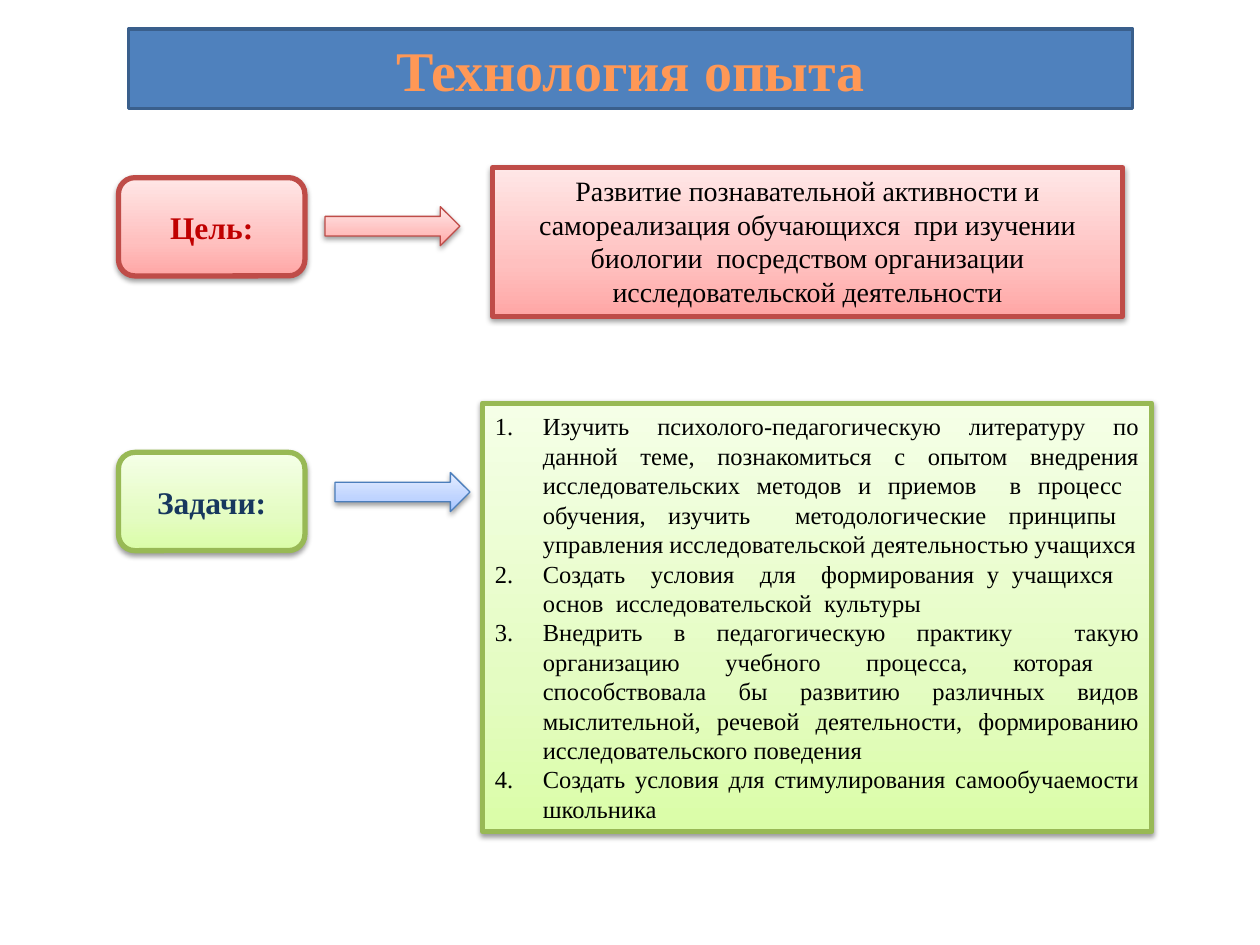
from lxml import etree
from pptx import Presentation
from pptx.dml.color import RGBColor
from pptx.enum import shapes, text
from pptx.oxml import ns
from pptx.util import Inches, Pt

FONT = "Times New Roman"
# Gradient stops from bottom to top, then the outline colour
RED = ("FFA6A5", "FFC0BF", "FFE7E7"), "BF4C48"
GREEN = ("DAFDA7", "E4FCC2", "F5FFE7"), "98B955"
BLUE = ("A4C4FF", "BFD4FF", "E6EEFF"), "4B7EBC"
STOPS = (0, 35, 100)

GOAL = ("Развитие познавательной активности и самореализация обучающихся  при изучении "
        "биологии  посредством организации исследовательской деятельности")
TASKS = [
    "Изучить психолого-педагогическую литературу по данной теме, познакомиться с опытом "
    "внедрения исследовательских методов и приемов  в процесс  обучения, изучить  "
    "методологические принципы  управления исследовательской деятельностью учащихся",
    "Создать  условия  для  формирования у учащихся   основ  исследовательской  культуры",
    "Внедрить в педагогическую практику  такую организацию учебного процесса, которая  "
    "способствовала бы развитию различных видов мыслительной, речевой деятельности, "
    "формированию исследовательского поведения",
    "Создать условия для стимулирования самообучаемости школьника",
]


def rgb(value):
    return RGBColor.from_string(value)


def add(parent, tag, **attributes):
    return etree.SubElement(parent, ns.qn(tag), attributes)


def set_outline(shape, color, width):
    shape.line.color.rgb = rgb(color)
    shape.line.width = Pt(width)


def add_panel(slide, kind, box, palette, width=3):
    """Shape with a vertical gradient, an outline and a soft shadow."""
    colors, outline = palette
    shape = slide.shapes.add_shape(kind, *map(Inches, box))
    shape.fill.gradient()
    shape.fill.gradient_angle = 90
    stops = shape._element.spPr.find(".//" + ns.qn("a:gsLst"))
    stops.clear()
    for position, color in zip(STOPS, colors):
        stop = add(stops, "a:gs", pos=str(position * 1000))
        add(stop, "a:srgbClr", val=color)
    set_outline(shape, outline, width)

    shape.shadow.inherit = False
    effects = shape._element.spPr.find(ns.qn("a:effectLst"))
    shadow = add(effects, "a:outerShdw", blurRad=str(Pt(3.1)), dist=str(Pt(1.6)),
                 dir="5400000", rotWithShape="0")
    add(add(shadow, "a:srgbClr", val="000000"), "a:alpha", val="38000")
    return shape


def write(shape, paragraphs, size, color, bold=False, align=text.PP_ALIGN.CENTER,
          anchor=text.MSO_ANCHOR.MIDDLE, numbered=False):
    frame = shape.text_frame
    frame.word_wrap = True
    frame.vertical_anchor = anchor
    frame.text = "\n".join(paragraphs)
    for paragraph in frame.paragraphs:
        paragraph.alignment = align
        if numbered:
            properties = paragraph._p.get_or_add_pPr()
            properties.set("marL", str(Inches(0.38)))
            properties.set("indent", str(Inches(-0.38)))
            add(properties, "a:buFont", typeface="+mj-lt")
            add(properties, "a:buAutoNum", type="arabicPeriod")
        font = paragraph.font
        font.name, font.size, font.bold = FONT, Pt(size), bold
        font.color.rgb = rgb(color)


def add_title(slide, box):
    title = slide.shapes.title
    title.left, title.top, title.width, title.height = map(Inches, box)
    geometry = add(title._element.spPr, "a:prstGeom", prst="roundRect")
    add(geometry, "a:avLst")
    title.fill.solid()
    title.fill.fore_color.rgb = rgb("4F81BD")
    set_outline(title, "3A5F8C", 2)
    write(title, ["Технология опыта"], 32, "FF9856", bold=True)


def add_label(slide, box, caption, color, palette):
    label = add_panel(slide, shapes.MSO_SHAPE.ROUNDED_RECTANGLE, box, palette)
    write(label, [caption], 18, color, bold=True)


def add_arrow(slide, box, palette):
    add_panel(slide, shapes.MSO_SHAPE.RIGHT_ARROW, box, palette, width=0.75)


def add_goal(slide, left, top):
    add_label(slide, (left, top + 0.08, 1.48, 0.78), "Цель:", "C00000", RED)
    add_arrow(slide, (left + 1.64, top + 0.31, 1.07, 0.31), RED)
    goal = add_panel(slide, shapes.MSO_SHAPE.RECTANGLE, (left + 2.97, top, 5, 1.18), RED)
    write(goal, [GOAL], 16, "000000", anchor=text.MSO_ANCHOR.TOP)


def add_tasks(slide, left, top):
    add_label(slide, (left, top + 0.39, 1.48, 0.78), "Задачи:", "17375E", GREEN)
    add_arrow(slide, (left + 1.72, top + 0.55, 1.07, 0.31), BLUE)
    tasks = add_panel(slide, shapes.MSO_SHAPE.RECTANGLE, (left + 2.89, top, 5.31, 3.4), GREEN)
    write(tasks, TASKS, 14, "000000", align=text.PP_ALIGN.JUSTIFY, numbered=True)


def main():
    deck = Presentation()
    deck.slide_width, deck.slide_height = Inches(10), Inches(7.5)
    slide = deck.slides.add_slide(deck.slide_layouts.get_by_name("Title Only"))
    add_title(slide, (1.02, 0.23, 7.97, 0.63))
    add_goal(slide, 0.94, 1.33)
    add_tasks(slide, 0.94, 3.2)
    deck.save("out.pptx")


if __name__ == "__main__":
    main()
